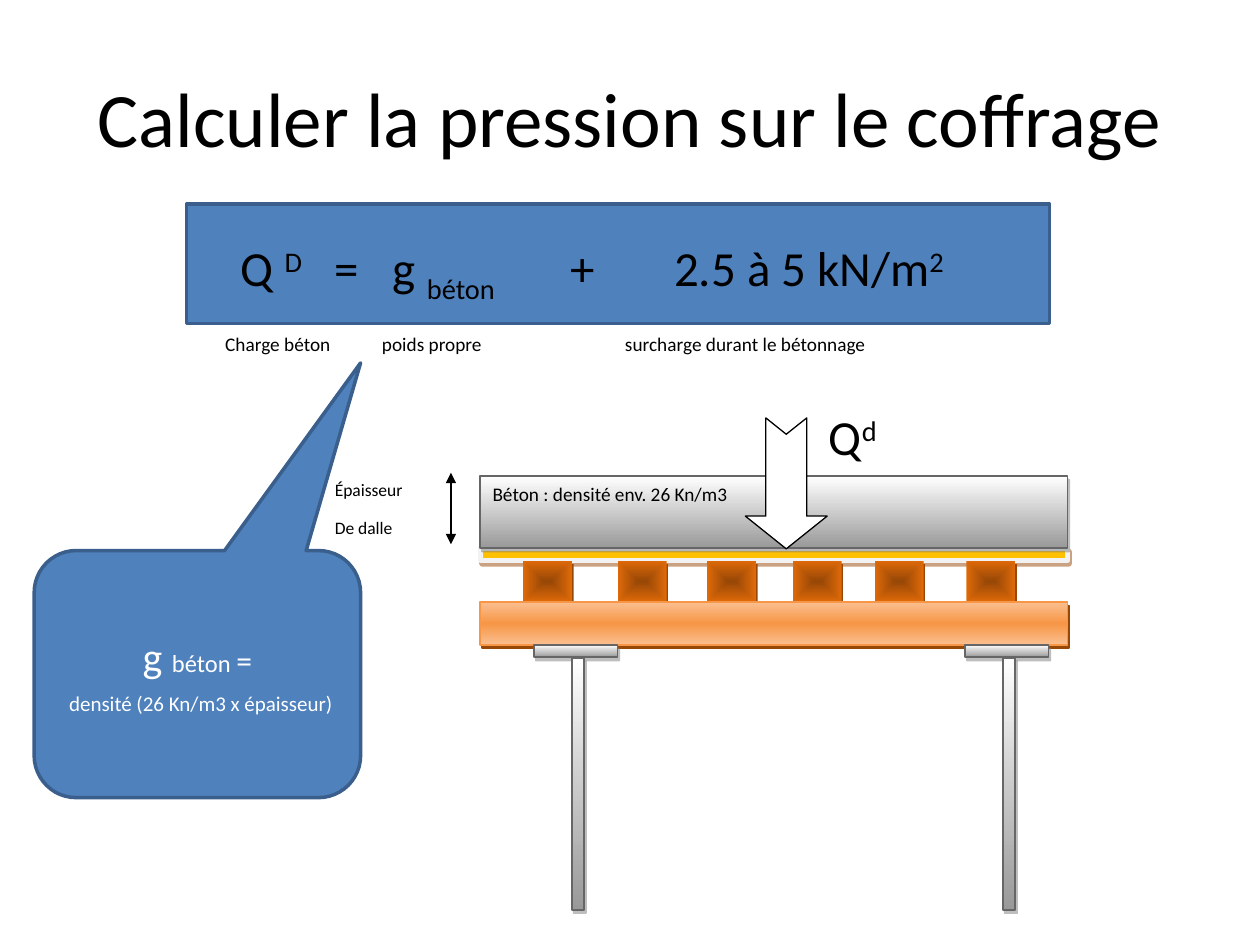
import pptx
import pptx.dml.color
import pptx.enum.shapes
import pptx.enum.text
import pptx.oxml.ns
import pptx.util
from dataclasses import dataclass
from typing import Optional
from lxml import etree

Cm = pptx.util.Cm
Pt = pptx.util.Pt
RGBColor = pptx.dml.color.RGBColor
Shape = pptx.enum.shapes.MSO_SHAPE
Anchor = pptx.enum.text.MSO_ANCHOR
Align = pptx.enum.text.PP_ALIGN
qn = pptx.oxml.ns.qn

BLACK = RGBColor(0x00, 0x00, 0x00)
WHITE = RGBColor(0xFF, 0xFF, 0xFF)
PALE = RGBColor(0xF2, 0xF2, 0xF2)
BLUE = RGBColor(0x4F, 0x81, 0xBD)
NAVY = RGBColor(0x3A, 0x5F, 0x8C)
YELLOW = RGBColor(0xFF, 0xC0, 0x00)
BROWN = RGBColor(0x97, 0x47, 0x06)
RUST = RGBColor(0xDF, 0x6A, 0x09)
ORANGE = RGBColor(0xF7, 0x96, 0x46)
PEACH = RGBColor(0xFA, 0xBF, 0x8F)
STEEL = RGBColor(0x99, 0x99, 0x99)
GREY = RGBColor(0x66, 0x66, 0x66)
SHADE = RGBColor(0x7F, 0x7F, 0x7F)
FONT = "Calibri"


@dataclass(frozen=True)
class Look:
    fill: tuple[RGBColor, ...]
    line: Optional[RGBColor] = None
    width: float = 1
    shadow: Optional[RGBColor] = None
    opacity: int = 50
    radial: bool = False


@dataclass(frozen=True)
class Area:
    left: float
    top: float
    width: float
    height: float

    def lengths(self) -> tuple:
        return Cm(self.left), Cm(self.top), Cm(self.width), Cm(self.height)


@dataclass(frozen=True)
class Span:
    text: str
    size: float
    baseline: int = 0
    color: RGBColor = BLACK


@dataclass(frozen=True)
class Para:
    spans: tuple[Span, ...]
    align: Align = Align.LEFT
    after: float = 0
    tabs: tuple[float, ...] = ()


PANEL = Look((BLUE,), NAVY, 2)
PLYWOOD = Look((YELLOW,), PALE, 3, BROWN)
JOIST = Look((BROWN, RUST), shadow=BROWN, opacity=100, radial=True)
BEAM = Look((PEACH, ORANGE, PEACH), ORANGE, 1, BROWN, 100)
METAL = Look((WHITE, STEEL), GREY, 1, SHADE)
ARROW = Look((WHITE,), BLACK, 0.75)
PLAIN = Look((WHITE,))


def add_color(parent, color: RGBColor):
    return etree.SubElement(parent, qn("a:srgbClr"), val=str(color))


def paint_gradient(shape, look: Look) -> None:
    shape.fill.background()
    empty = shape._element.spPr.find(qn("a:noFill"))
    gradient = etree.Element(qn("a:gradFill"), rotWithShape="1")
    stops = etree.SubElement(gradient, qn("a:gsLst"))
    for index, color in enumerate(look.fill):
        position = 100000 * index // (len(look.fill) - 1)
        add_color(etree.SubElement(stops, qn("a:gs"), pos=str(position)), color)
    if look.radial:
        route = etree.SubElement(gradient, qn("a:path"), {"path": "shape"})
        etree.SubElement(route, qn("a:fillToRect"), {side: "50000" for side in "ltrb"})
    else:
        etree.SubElement(gradient, qn("a:lin"), ang="5400000", scaled="0")
    empty.getparent().replace(empty, gradient)


def add_shadow(shape, look: Look) -> None:
    effects = shape._element.spPr.find(qn("a:effectLst"))
    shadow = etree.SubElement(effects, qn("a:outerShdw"), blurRad="0", dist=str(Pt(2.2)),
                              dir=str(63 * 60000), algn="ctr", rotWithShape="0")
    tint = add_color(shadow, look.shadow)
    etree.SubElement(tint, qn("a:alpha"), val=str(look.opacity * 1000))


def write(shape, paras: list[Para], anchor: Anchor = Anchor.TOP) -> None:
    frame = shape.text_frame
    frame.word_wrap = True
    frame.vertical_anchor = anchor
    for index, item in enumerate(paras):
        para = frame.add_paragraph() if index else frame.paragraphs[0]
        para.alignment = item.align
        para.space_after = Pt(item.after)
        if item.tabs:
            stops = etree.SubElement(para._p.get_or_add_pPr(), qn("a:tabLst"))
            for stop in item.tabs:
                etree.SubElement(stops, qn("a:tab"), pos=str(Cm(stop)), algn="l")
        for part in item.spans:
            span = para.add_run()
            span.text = part.text
            span.font.name = FONT
            span.font.size = Pt(part.size)
            span.font.color.rgb = part.color
            if part.baseline:
                span.font._element.set("baseline", str(part.baseline * 1000))


def add_block(page, area: Area, look: Look, kind: Shape = Shape.RECTANGLE):
    shape = page.shapes.add_shape(kind, *area.lengths())
    shape.shadow.inherit = False
    if len(look.fill) > 1:
        paint_gradient(shape, look)
    else:
        shape.fill.solid()
        shape.fill.fore_color.rgb = look.fill[0]
    if look.line is None:
        shape.line.fill.background()
    else:
        shape.line.color.rgb = look.line
        shape.line.width = Pt(look.width)
    if look.shadow is not None:
        add_shadow(shape, look)
    return shape


def add_text(page, area: Area, paras: list[Para], anchor: Anchor = Anchor.TOP) -> None:
    write(page.shapes.add_textbox(*area.lengths()), paras, anchor)


def add_prop(page, left: float) -> None:
    add_block(page, Area(left, 13, 1.68, 0.25), METAL)
    add_block(page, Area(left + 0.76, 13.26, 0.25, 5.08), METAL)


def add_thickness_arrow(page, x: float, top: float, bottom: float) -> None:
    arrow = page.shapes.add_connector(pptx.enum.shapes.MSO_CONNECTOR.STRAIGHT,
                                      Cm(x), Cm(top), Cm(x), Cm(bottom))
    arrow.line.color.rgb = BLACK
    arrow.line.width = Pt(0.75)
    for end in ("a:headEnd", "a:tailEnd"):
        etree.SubElement(arrow.line._get_or_add_ln(), qn(end), type="triangle")
    etree.SubElement(arrow._element.spPr, qn("a:effectLst"))


def add_formula(page) -> None:
    add_block(page, Area(3.76, 4.11, 17.4, 2.41), PANEL)
    add_text(page, Area(0.5 * 2.54, 0.76, 22.86, 3.18),
             [Para((Span("Calculer la pression sur le coffrage", 44),), Align.CENTER)], Anchor.MIDDLE)
    formula = (Span("Q ", 28), Span("D", 28, 30), Span("\t=\tg ", 28), Span("béton", 28, -25),
               Span("\t+\t2.5 à 5 kN/m", 28), Span("2", 28, 30))
    add_text(page, Area(4.6, 4.67, 16.54, 1.45), [Para(formula, tabs=(1.9, 3.07, 6.66, 8.74))])


def add_formwork(page) -> None:
    add_block(page, Area(9.68, 11.05, 11.84, 0.25), PLYWOOD)
    for left in (10.54, 12.45, 14.25, 15.98, 17.63, 19.48):
        add_block(page, Area(left, 11.3, 0.99, 0.84), JOIST)
    add_block(page, Area(9.68, 12.14, 11.84, 0.86), BEAM)
    for left in (10.77, 19.46):
        add_prop(page, left)
    concrete = add_block(page, Area(9.68, 9.6, 11.84, 1.45), METAL)
    write(concrete, [Para((Span("Béton\u00a0: densité env. 26 Kn/m3", 11),), after=10)])


def add_load(page) -> None:
    load = add_block(page, Area(14.53, 8.92, 2.64, 1.65), ARROW, Shape.NOTCHED_RIGHT_ARROW)
    load.rotation = 90
    load.adjustments[0] = 0.5
    load.adjustments[1] = 0.4
    add_text(page, Area(16.46, 8.08, 2.97, 1.45), [Para((Span("Q", 28), Span("d", 28, 30)))])


def add_notes_on_drawing(page) -> None:
    add_text(page, Area(6.5, 9.53, 1.98, 1.7),
             [Para((Span(word, 10),), after=10) for word in ("Épaisseur", "De dalle")])
    add_thickness_arrow(page, 9.09, 9.53, 10.97)
    legend = add_block(page, Area(4.29, 6.58, 15.82, 1.14), PLAIN)
    write(legend, [Para((Span("Charge béton\tpoids propre\tsurcharge durant le bétonnage", 11),),
                        after=10, tabs=(3.16, 8.06))])
    callout = add_block(page, Area(0.69, 11.1, 6.58, 4.98), PANEL, Shape.ROUNDED_RECTANGULAR_CALLOUT)
    for index, value in enumerate((0.5, -1.26, 0.17)):
        callout.adjustments[index] = value
    weight = (Span("g ", 24, 0, WHITE), Span("béton ", 14, 0, WHITE), Span("=", 18, 0, WHITE))
    density = (Span(" ", 18, 0, WHITE), Span("densité (26 Kn/m3 x épaisseur)", 12, 0, WHITE))
    write(callout, [Para(weight, Align.CENTER), Para(density, Align.CENTER)], Anchor.MIDDLE)


def main() -> None:
    deck = pptx.Presentation()
    deck.slide_width, deck.slide_height = Cm(25.4), Cm(19.05)
    page = deck.slides.add_slide(deck.slide_layouts[6])
    add_formula(page)
    add_formwork(page)
    add_load(page)
    add_notes_on_drawing(page)
    deck.save("out.pptx")


if __name__ == "__main__":
    main()
